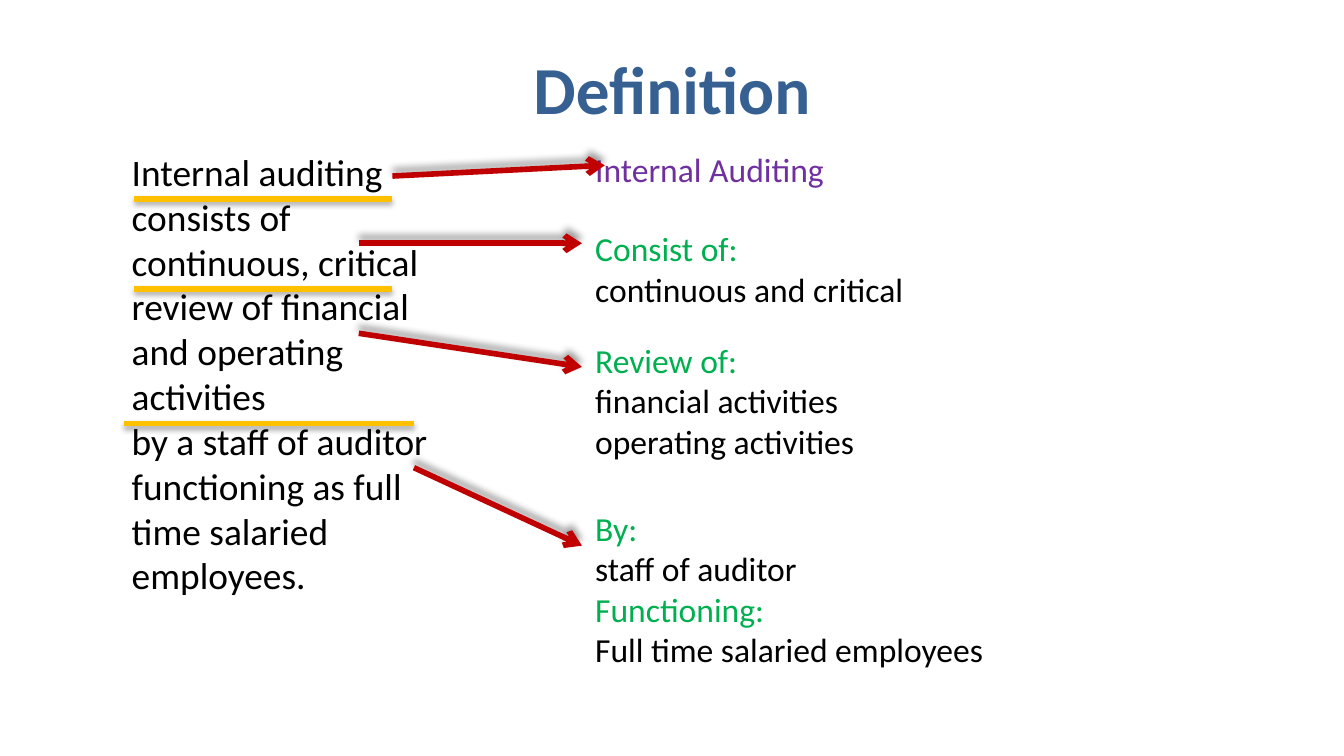
from lxml.etree import SubElement
from pptx import Presentation
from pptx.dml.color import RGBColor
from pptx.enum.shapes import MSO_CONNECTOR
from pptx.enum.text import MSO_ANCHOR, MSO_AUTO_SIZE, PP_ALIGN
from pptx.oxml.ns import qn
from pptx.util import Inches, Pt

BLUE = RGBColor(0x37, 0x60, 0x92)
BLACK = RGBColor(0, 0, 0)
PURPLE = RGBColor(0x70, 0x30, 0xA0)
GREEN = RGBColor(0x00, 0xB0, 0x50)
RED = RGBColor(0xC0, 0x00, 0x00)
AMBER = RGBColor(0xFF, 0xC0, 0x00)


def format_run(run, size, color):
    run.font.name = "Calibri"
    run.font.size = Pt(size)
    run.font.color.rgb = color


def draw_line(start, end, color, opacity, blur, distance, angle):
    line = slide.shapes.add_connector(
        MSO_CONNECTOR.STRAIGHT, *[Inches(v) for v in (*start, *end)])
    line.line.color.rgb = color
    line.line.width = Pt(3)
    effects = SubElement(line._element.spPr, qn("a:effectLst"))
    shadow = SubElement(effects, qn("a:outerShdw"), blurRad=str(Pt(blur)),
                        dist=str(Pt(distance)), dir=str(angle * 60000),
                        algn="ctr", rotWithShape="0")
    black = SubElement(shadow, qn("a:srgbClr"), val="000000")
    SubElement(black, qn("a:alpha"), val=str(opacity * 1000))
    return line


prs = Presentation()
prs.slide_width = Inches(10)
prs.slide_height = Inches(10 * 9 / 16)
slide = prs.slides.add_slide(prs.slide_layouts[1])

title = slide.shapes.title
title.left, title.top = Inches(0.5), Inches(0.23)
title.width, title.height = Inches(9), Inches(0.84)
title.text_frame.text = "Definition"
title.text_frame.vertical_anchor = MSO_ANCHOR.MIDDLE
heading = title.text_frame.paragraphs[0]
heading.alignment = PP_ALIGN.CENTER
format_run(heading.runs[0], 36, BLUE)
heading.runs[0].font.bold = True

definition = slide.placeholders[1]
definition.left, definition.top = Inches(0.5), Inches(1.06)
definition.width, definition.height = Inches(2.83), Inches(4.08)
sentence = definition.text_frame.paragraphs[0]
sentence.text = (
    "Internal auditing consists of continuous, critical review of financial "
    "and operating activities\vby a staff of auditor functioning as full "
    "time salaried employees.")
for run in sentence.runs:
    format_run(run, 20, BLACK)
for line_break in sentence._p.findall(qn("a:br")):
    SubElement(line_break, qn("a:rPr"), sz="2000")
indent = sentence._p.get_or_add_pPr()
indent.set("marL", str(Inches(0.38)))
indent.set("indent", "0")
SubElement(indent, qn("a:buNone"))

parts = [
    (1.06, 0.4, PURPLE, ["Internal Auditing"]),
    (1.65, 0.71, GREEN, ["Consist of:\vcontinuous and critical"]),
    (2.48, 1.01, GREEN,
     ["Review of:\vfinancial activities\voperating activities"]),
    (3.73, 1.31, GREEN, ["By:\vstaff of auditor",
                         "Functioning:\vFull time salaried employees"]),
]
for top, height, label_color, paragraphs in parts:
    part = slide.shapes.add_textbox(
        Inches(4.33), Inches(top), Inches(4.25), Inches(height))
    frame = part.text_frame
    frame.word_wrap = True
    frame.auto_size = MSO_AUTO_SIZE.SHAPE_TO_FIT_TEXT
    frame.text = "\n".join(paragraphs)
    for paragraph in frame.paragraphs:
        for position, run in enumerate(paragraph.runs):
            format_run(run, 18, BLACK if position else label_color)

for left, right, y in [(1, 2.92, 1.48), (1, 2.92, 2.15), (0.92, 3.08, 3.15)]:
    draw_line((left, y), (right, y), AMBER, 35, 3.1, 1.8, 90)

arrows = [
    ((2.92, 1.31), (4.5, 1.23)),
    ((2.67, 1.81), (4.33, 1.81)),
    ((2.67, 2.48), (4.33, 2.73)),
    ((3.08, 3.48), (4.33, 4.06)),
]
for start, end in arrows:
    arrow = draw_line(start, end, RED, 40, 4, 3, 270)
    SubElement(arrow.line._get_or_add_ln(), qn("a:tailEnd"), type="arrow")

prs.save("out.pptx")
